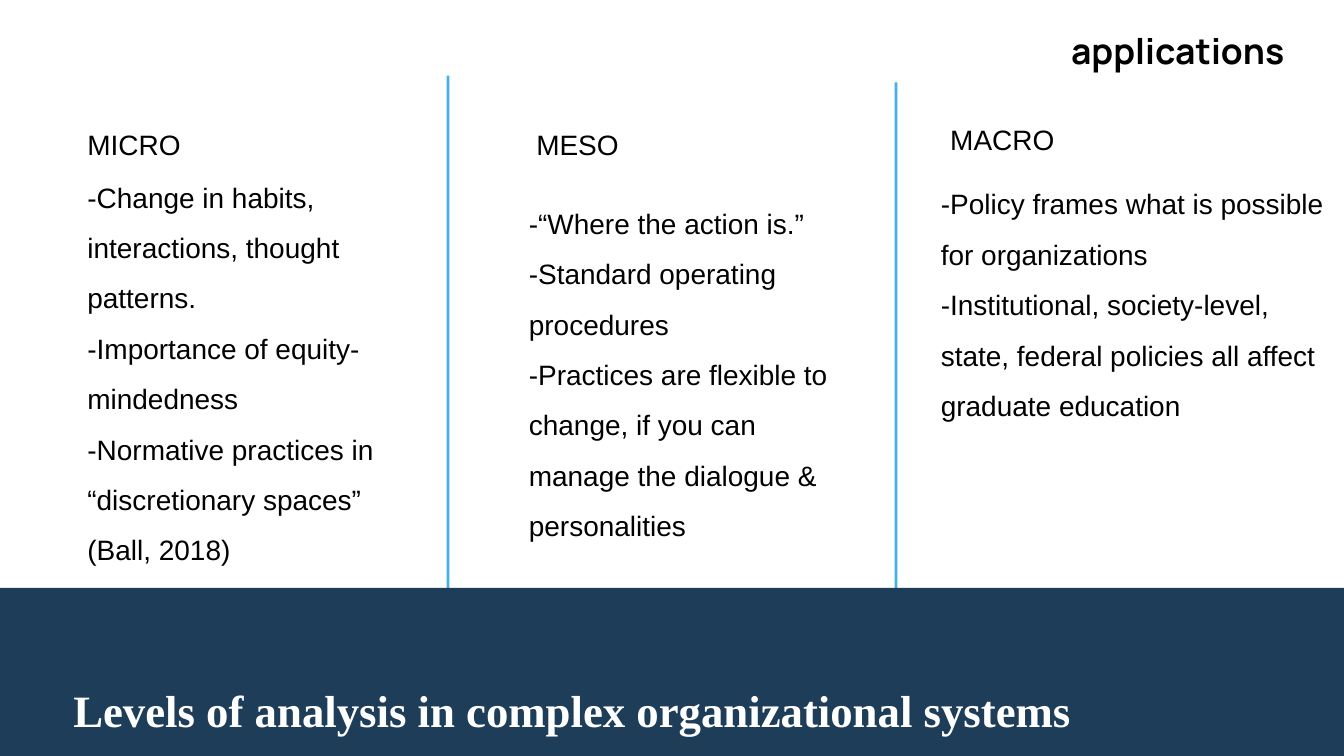
from lxml import etree
from pptx import Presentation
from pptx.dml.color import RGBColor
from pptx.enum import shapes, text
from pptx.oxml import ns
from pptx.util import Pt

BLACK = RGBColor(0x00, 0x00, 0x00)
WHITE = RGBColor(0xFF, 0xFF, 0xFF)
NAVY = RGBColor(0x1E, 0x3D, 0x58)
SKY = RGBColor(0x43, 0xB0, 0xF1)

SLIDE_WIDTH, SLIDE_HEIGHT = 1440, 810
BAND_TOP = 630
DIVIDER_WIDTH = 2.9

TITLE = "Levels of analysis in complex organizational systems"
TAG = "applications"

COLUMNS = [
    {
        "heading": "MICRO",
        "heading_box": (93.6, 118.8, 332.6, 36),
        "points": [
            "-Change in habits, interactions, thought patterns.",
            "-Importance of equity-mindedness",
            "-Normative practices in “discretionary spaces” (Ball, 2018)",
        ],
        "points_box": (93.6, 175, 332.6, 418.3),
    },
    {
        "heading": "MESO",
        "heading_box": (574.6, 118.1, 332.6, 36),
        "points": [
            "-“Where the action is.”",
            "-Standard operating procedures",
            "-Practices are flexible to change, if you can manage the dialogue & personalities",
        ],
        "points_box": (566.6, 203, 332.6, 418.3),
    },
    {
        "heading": "MACRO",
        "heading_box": (1018.1, 113, 332.6, 36),
        "points": [
            "-Policy frames what is possible for organizations",
            "-Institutional, society-level, state, federal policies all affect graduate education",
        ],
        "points_box": (1008, 182.2, 414, 254.2),
    },
]
DIVIDER_TOPS = [81, 88.2]


def place(shape, box):
    shape.left, shape.top, shape.width, shape.height = map(Pt, box)


def add_bar(slide, box, color):
    bar = slide.shapes.add_shape(shapes.MSO_SHAPE.RECTANGLE, *map(Pt, box))
    bar.shadow.inherit = False
    bar.fill.solid()
    bar.fill.fore_color.rgb = color
    bar.line.fill.background()


def write(shape, box, lines, font_name, size, color, bold=False, spacing=1.0, insets=(0, 0)):
    place(shape, box)
    frame = shape.text_frame
    frame.word_wrap = True
    frame.auto_size = text.MSO_AUTO_SIZE.NONE
    frame.vertical_anchor = text.MSO_ANCHOR.TOP
    frame.margin_left = frame.margin_right = Pt(insets[0])
    frame.margin_top = frame.margin_bottom = Pt(insets[1])
    frame.text = "\n".join(lines)
    for paragraph in frame.paragraphs:
        properties = paragraph._p.get_or_add_pPr()
        properties.set("marL", "0")
        properties.set("indent", "0")
        etree.SubElement(properties, ns.qn("a:buNone"))
        paragraph.alignment = text.PP_ALIGN.LEFT
        paragraph.line_spacing = spacing
        paragraph.space_before = Pt(0)
        paragraph.font.name = font_name
        paragraph.font.size = Pt(size)
        paragraph.font.bold = bold
        paragraph.font.color.rgb = color


def main():
    presentation = Presentation()
    presentation.slide_width = Pt(SLIDE_WIDTH)
    presentation.slide_height = Pt(SLIDE_HEIGHT)
    slide = presentation.slides.add_slide(presentation.slide_layouts.get_by_name("Comparison"))
    title = slide.shapes.title
    bodies = [holder for holder in slide.placeholders if holder.placeholder_format.idx in range(1, 5)]

    for number, top in enumerate(DIVIDER_TOPS, start=1):
        center = SLIDE_WIDTH * number / len(COLUMNS)
        add_bar(slide, (center - DIVIDER_WIDTH / 2, top, DIVIDER_WIDTH, BAND_TOP - top), SKY)
    add_bar(slide, (0, BAND_TOP, SLIDE_WIDTH, SLIDE_HEIGHT - BAND_TOP), NAVY)

    for column in COLUMNS:
        parts = [(column["heading_box"], [column["heading"]]), (column["points_box"], column["points"])]
        for box, lines in parts:
            shape = bodies.pop(0) if bodies else slide.shapes.add_textbox(*map(Pt, box))
            write(shape, box, lines, "Arial", 30, BLACK, spacing=1.5)

    write(title, (78.5, 680.4, 1316.9, 58.3), [TITLE], "Times New Roman", 48, WHITE, bold=True, spacing=1.88)
    slide.shapes._spTree.append(title._element)

    tag_box = (1140.5, 27.4, 254.9, 53.3)
    tag = slide.shapes.add_textbox(*map(Pt, tag_box))
    write(tag, tag_box, [TAG], "Manrope", 38, BLACK, bold=True, insets=(7.2, 3.6))

    presentation.save("out.pptx")


if __name__ == "__main__":
    main()
